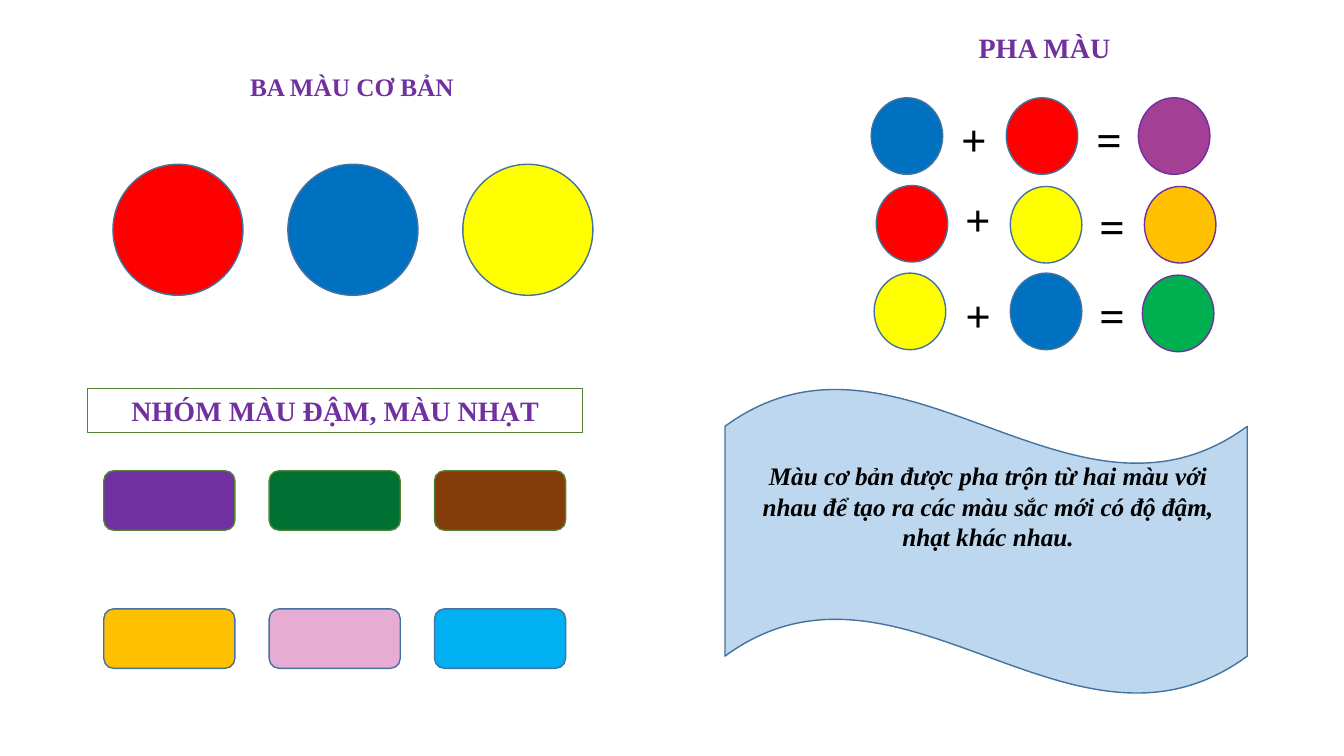
from pptx import Presentation
from pptx.dml.color import RGBColor
from pptx.enum.shapes import MSO_SHAPE
from pptx.enum.text import MSO_AUTO_SIZE, PP_ALIGN
from pptx.util import Inches, Pt

RED = RGBColor(0xFF, 0x00, 0x00)
BLUE = RGBColor(0x00, 0x70, 0xC0)
YELLOW = RGBColor(0xFF, 0xFF, 0x00)
VIOLET = RGBColor(0xA3, 0x3F, 0x95)
ORANGE = RGBColor(0xFF, 0xC0, 0x00)
GREEN = RGBColor(0x00, 0xB0, 0x50)
PURPLE = RGBColor(0x70, 0x30, 0xA0)
DARK_GREEN = RGBColor(0x00, 0x70, 0x33)
BROWN = RGBColor(0x84, 0x3C, 0x0B)
PINK = RGBColor(0xE6, 0xAC, 0xD3)
SKY = RGBColor(0x00, 0xB0, 0xF0)
PALE_BLUE = RGBColor(0xBD, 0xD7, 0xEE)
BLUE_EDGE = RGBColor(0x43, 0x73, 0x9E)
GREEN_EDGE = RGBColor(0x54, 0x82, 0x35)
BLACK = RGBColor(0x00, 0x00, 0x00)

deck = Presentation()
deck.slide_width, deck.slide_height = Inches(13.33), Inches(7.5)
slide = deck.slides.add_slide(deck.slide_layouts[6])


def add_swatch(kind, left, top, width, height, fill, edge=BLUE_EDGE, weight=1):
    swatch = slide.shapes.add_shape(
        kind, Inches(left), Inches(top), Inches(width), Inches(height))
    swatch.shadow.inherit = False
    if fill is None:
        swatch.fill.background()
    else:
        swatch.fill.solid()
        swatch.fill.fore_color.rgb = fill
    swatch.line.color.rgb = edge
    swatch.line.width = Pt(weight)
    return swatch


def add_words(words, left, top, width, height, size, color, italic=None, holder=None):
    holder = holder or slide.shapes.add_textbox(
        Inches(left), Inches(top), Inches(width), Inches(height))
    frame = holder.text_frame
    frame.word_wrap = True
    frame.auto_size = MSO_AUTO_SIZE.SHAPE_TO_FIT_TEXT
    paragraph = frame.paragraphs[0]
    paragraph.text = words
    paragraph.alignment = PP_ALIGN.CENTER
    font = paragraph.font
    font.name, font.size, font.bold, font.italic = "Times New Roman", Pt(size), True, italic
    font.color.rgb = color


# Three primary colours
add_words("BA MÀU CƠ BẢN", 1.42, 0.66, 4.14, 0.4, 18, PURPLE)
for column, color in enumerate((RED, BLUE, YELLOW)):
    add_swatch(MSO_SHAPE.FLOWCHART_CONNECTOR, 1.12 + 1.735 * column, 1.63, 1.29, 1.3, color)

# Colour mixing: each sum gives (left, top, colour) of its circles,
# then (left, top, width) of its plus and equals signs
add_words("PHA MÀU", 8.36, 0.25, 4, 0.44, 20, PURPLE)
sums = [
    ([(8.64, 0.97, BLUE), (9.98, 0.97, RED), (11.29, 0.97, VIOLET)],
     [(9.38, 1.06, 0.56), (10.7, 1.06, 0.6)]),
    ([(8.69, 1.84, RED), (10.02, 1.85, YELLOW), (11.35, 1.85, ORANGE)],
     [(9.42, 1.85, 0.56), (10.73, 1.92, 0.6)]),
    ([(8.67, 2.71, YELLOW), (10.02, 2.71, BLUE), (11.33, 2.73, GREEN)],
     [(9.39, 2.8, 0.62), (10.73, 2.8, 0.6)]),
]
for circles, signs in sums:
    for (left, top, color), edge in zip(circles, (BLUE_EDGE, BLUE_EDGE, PURPLE)):
        add_swatch(MSO_SHAPE.FLOWCHART_CONNECTOR, left, top, 0.71, 0.76, color, edge)
    for sign, (left, top, width) in zip("+=", signs):
        add_words(sign, left, top, width, 0.61, 32, BLACK)

# Conclusion on the wave
add_swatch(MSO_SHAPE.WAVE, 7.19, 3.85, 5.18, 3.04, PALE_BLUE)
add_words("Màu cơ bản được pha trộn từ hai màu với nhau để tạo ra các màu sắc "
          "mới có độ đậm, nhạt khác nhau.", 7.37, 4.52, 4.86, 1.71, 18, BLACK, italic=True)

# Dark and light colour groups
heading_place = (0.87, 3.85, 4.91, 0.44)
heading = add_swatch(MSO_SHAPE.RECTANGLE, *heading_place, None, GREEN_EDGE, 0.75)
add_words("NHÓM MÀU ĐẬM, MÀU NHẠT", *heading_place, 20, PURPLE, holder=heading)
groups = [(4.67, GREEN_EDGE, (PURPLE, DARK_GREEN, BROWN)),
          (6.04, BLUE_EDGE, (ORANGE, PINK, SKY))]
for top, edge, colors in groups:
    for column, color in enumerate(colors):
        add_swatch(MSO_SHAPE.ROUNDED_RECTANGLE, 1.03 + 1.64 * column, top,
                   1.3, 0.59, color, edge)

deck.save("out.pptx")
